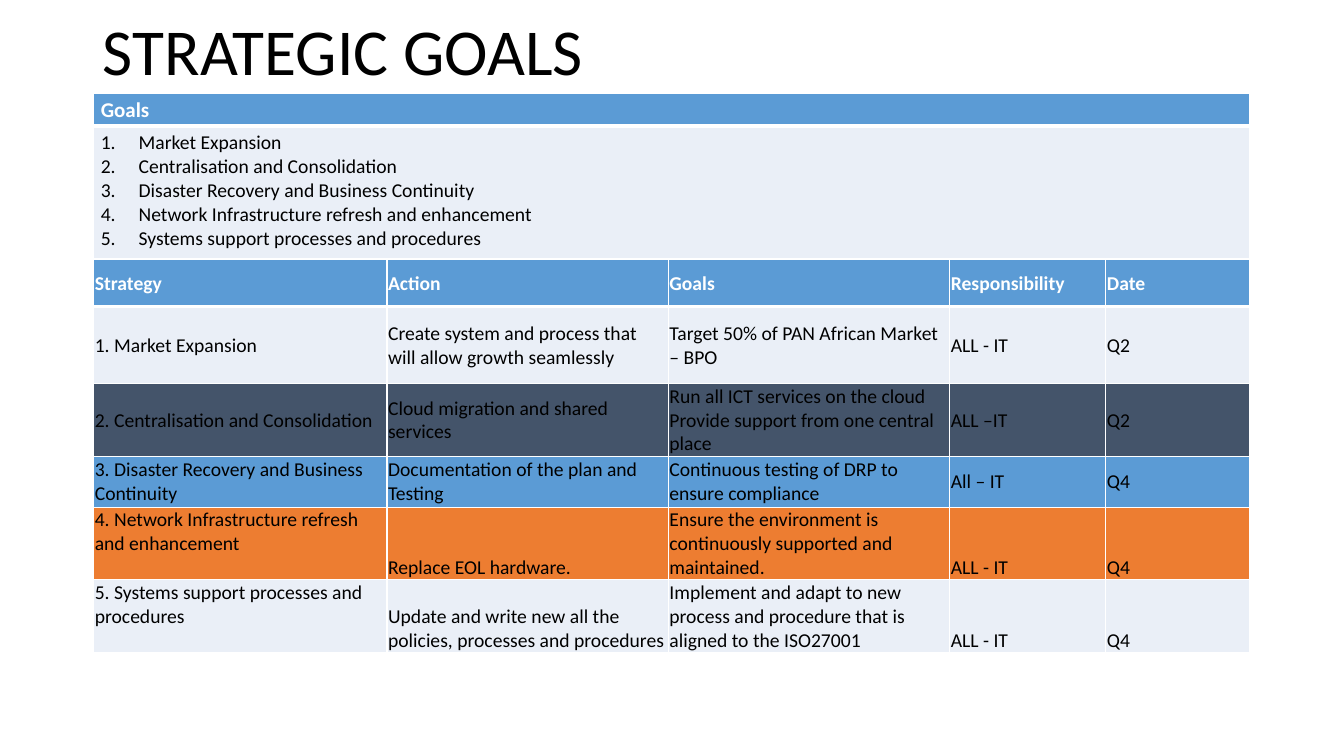
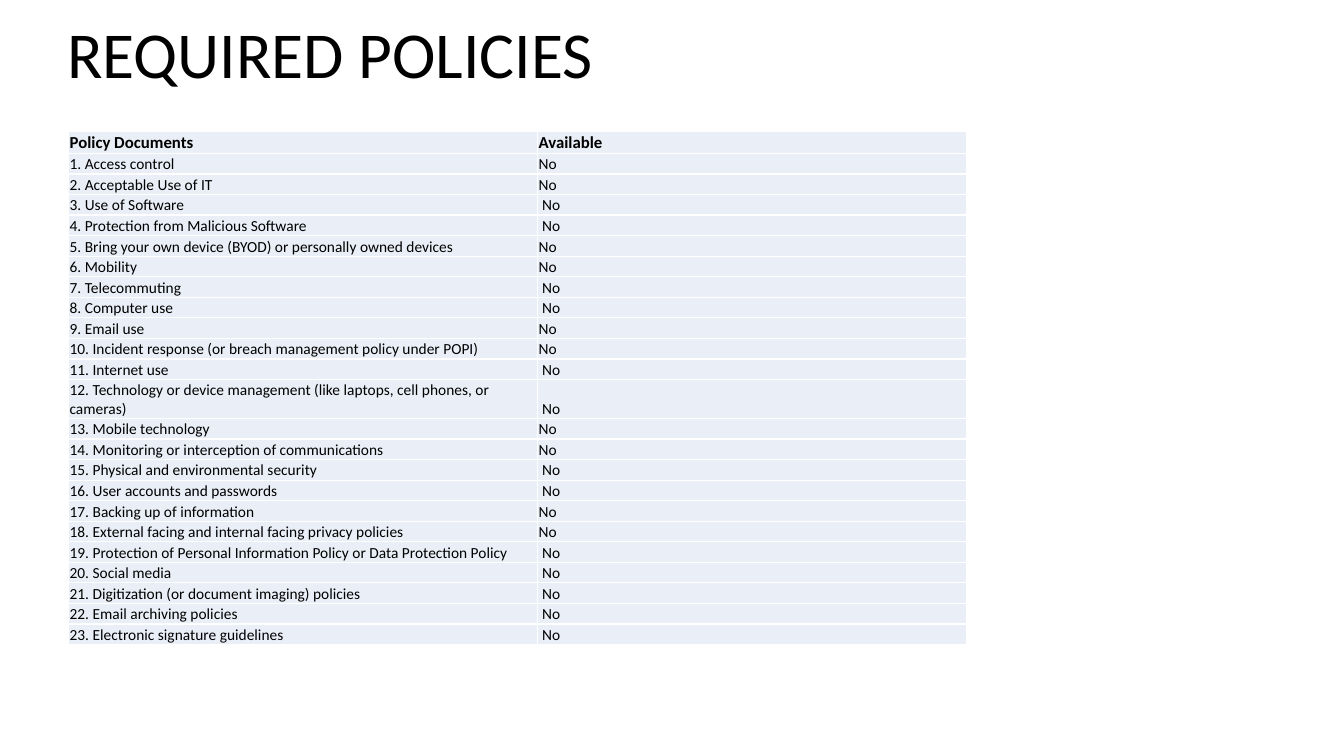
from lxml import etree
from pptx import Presentation
from pptx.dml.color import RGBColor
from pptx.enum.text import MSO_ANCHOR
from pptx.oxml.ns import qn
from pptx.util import Pt

TOP, MID, LOW = MSO_ANCHOR.TOP, MSO_ANCHOR.MIDDLE, MSO_ANCHOR.BOTTOM

# Shared look
FONT = "Calibri"
BLACK, WHITE = "000000", "FFFFFF"
BLUE, PALE, SLATE, ORANGE = "5B9BD5", "EAEFF7", "44546A", "ED7D31"
THIN, THICK = 1, 3
TIGHT = (0.72, 0.72)  # side and upper cell margins
INDENT = 27

# Content
GOALS = [
    "Market Expansion",
    "Centralisation and Consolidation",
    "Disaster Recovery and Business Continuity",
    "Network Infrastructure refresh and enhancement",
    "Systems support processes and procedures",
]
HEADS = ["Strategy", "Action", "Goals", "Responsibility", "Date"]
# Row height, fill, anchor of first cell, anchor of the rest, texts
PLANS = [
    (55, PALE, MID, MID,
     ["Create system and process that will allow growth seamlessly",
      "Target 50% of PAN African Market – BPO", "ALL - IT", "Q2"]),
    (51.5, SLATE, MID, MID,
     ["Cloud migration and shared services",
      "Run all ICT services on the cloud\nProvide support from one central place",
      "ALL –IT", "Q2"]),
    (36.5, BLUE, MID, MID,
     ["Documentation of the plan and Testing",
      "Continuous testing of DRP to ensure compliance", "All – IT", "Q4"]),
    (51.5, ORANGE, TOP, LOW,
     ["Replace EOL hardware.",
      "Ensure the environment is continuously supported and maintained.",
      "ALL - IT", "Q4"]),
    (51.5, PALE, TOP, LOW,
     ["Update and write new all the policies, processes and procedures",
      "Implement and adapt to new process and procedure that is aligned to the ISO27001",
      "ALL - IT", "Q4"]),
]
POLICIES = [
    "Access control",
    "Acceptable Use of IT",
    "Use of Software",
    "Protection from Malicious Software",
    "Bring your own device (BYOD) or personally owned devices",
    "Mobility",
    "Telecommuting",
    "Computer use",
    "Email use",
    "Incident response (or breach management policy under POPI)",
    "Internet use",
    "Technology or device management (like laptops, cell phones, or cameras)",
    "Mobile technology",
    "Monitoring or interception of communications",
    "Physical and environmental security",
    "User accounts and passwords",
    "Backing up of information",
    "External facing and internal facing privacy policies",
    "Protection of Personal Information Policy or Data Protection Policy",
    "Social media",
    "Digitization (or document imaging) policies",
    "Email archiving policies",
    "Electronic signature guidelines",
]
FLUSH = {1, 2, 5, 6, 9, 10, 13, 14, 17, 18}  # policies whose "No" is not inset
DOUBLE = 12  # policy that takes two lines


def color(code):
    return RGBColor.from_string(code)


def style(para, size, tint=BLACK, bold=False):
    for run in para.runs:
        font = run.font
        font.name, font.size, font.bold = FONT, Pt(size), bold
        font.color.rgb = color(tint)


def add_title(slide, text, left, top, spacing):
    box = slide.shapes.add_textbox(Pt(left), Pt(top), Pt(828), Pt(56))
    frame = box.text_frame
    frame.word_wrap = True
    frame.vertical_anchor = MID
    frame.text = text
    para = frame.paragraphs[0]
    para.line_spacing = spacing
    style(para, 46.8)


def add_grid(slide, left, top, widths, heights):
    table = slide.shapes.add_table(
        len(heights), len(widths), Pt(left), Pt(top),
        Pt(sum(widths)), Pt(sum(heights))).table
    table.horz_banding = False
    for col, width in zip(table.columns, widths):
        col.width = Pt(width)
    for row, height in zip(table.rows, heights):
        row.height = Pt(height)
    return table


def add_edges(cell, upper, lower):
    props = cell._tc.get_or_add_tcPr()
    for tag, width in (("lnL", THIN), ("lnR", THIN), ("lnT", upper), ("lnB", lower)):
        line = etree.SubElement(props, qn("a:" + tag), w=str(Pt(width)))
        fill = etree.SubElement(line, qn("a:solidFill"))
        etree.SubElement(fill, qn("a:srgbClr"), val=WHITE)


def add_number(para):
    props = para._p.get_or_add_pPr()
    props.set("marL", str(Pt(INDENT)))
    props.set("indent", str(Pt(-INDENT)))
    etree.SubElement(props, qn("a:buFont"), typeface="+mj-lt")
    etree.SubElement(props, qn("a:buAutoNum"), type="arabicPeriod")


def fill_cell(cell, text, size, fill=PALE, tint=BLACK, bold=False, anchor=TOP,
              pad=TIGHT, base=0, inset=0, upper=THIN, lower=THIN, listed=False):
    add_edges(cell, upper, lower)
    cell.fill.solid()
    cell.fill.fore_color.rgb = color(fill)
    side, head = pad
    cell.margin_left, cell.margin_right = Pt(side + inset), Pt(side)
    cell.margin_top, cell.margin_bottom = Pt(head), Pt(base)
    cell.vertical_anchor = anchor
    cell.text_frame.text = text
    for para in cell.text_frame.paragraphs:
        if listed:
            add_number(para)
        style(para, size, tint, bold)


def add_plans(slide):
    heights = [34] + [plan[0] for plan in PLANS]
    table = add_grid(slide, 67, 185, [209.5, 201, 201, 111.5, 103], heights)
    for col, text in enumerate(HEADS):
        fill_cell(table.cell(0, col), text, 14, BLUE, WHITE, True, MID, lower=THICK)
    for row, (_, fill, first, rest, texts) in enumerate(PLANS, 1):
        upper = THICK if row == 1 else THIN
        for col, text in enumerate([f"{row}. {GOALS[row - 1]}"] + texts):
            fill_cell(table.cell(row, col), text, 14, fill,
                      anchor=rest if col else first, upper=upper)


def add_goals(slide):
    table = add_grid(slide, 66.5, 67, [826], [23, 95])
    fill_cell(table.cell(0, 0), "Goals", 15, BLUE, WHITE, True,
              pad=(5.5, 2.3), base=2.3, lower=THICK)
    fill_cell(table.cell(1, 0), "\n".join(GOALS), 14,
              pad=(5.5, 3.6), base=3.6, upper=THICK, listed=True)


def add_policies(slide):
    heights = [15.8] + [27.8 if num == DOUBLE else 14.7
                        for num in range(1, len(POLICIES) + 1)]
    table = add_grid(slide, 49, 93.8, [335, 306.5], heights)
    for col, text in enumerate(["Policy Documents", "Available"]):
        fill_cell(table.cell(0, col), text, 12, bold=True, anchor=LOW)
    for num, name in enumerate(POLICIES, 1):
        fill_cell(table.cell(num, 0), f"{num}. {name}", 11, anchor=LOW)
        fill_cell(table.cell(num, 1), "No", 11, anchor=LOW,
                  inset=0 if num in FLUSH else 2.5)


def main():
    deck = Presentation()
    deck.slide_width, deck.slide_height = Pt(960), Pt(540)
    blank = deck.slide_layouts[6]

    # Strategic goals
    slide = deck.slides.add_slide(blank)
    add_plans(slide)
    add_goals(slide)
    add_title(slide, "STRATEGIC GOALS", 66.5, 11, 0.9)

    # Required policies
    slide = deck.slides.add_slide(blank)
    add_title(slide, "REQUIRED POLICIES", 41, 14.5, 0.8)
    add_policies(slide)

    deck.save("out.pptx")


if __name__ == "__main__":
    main()
